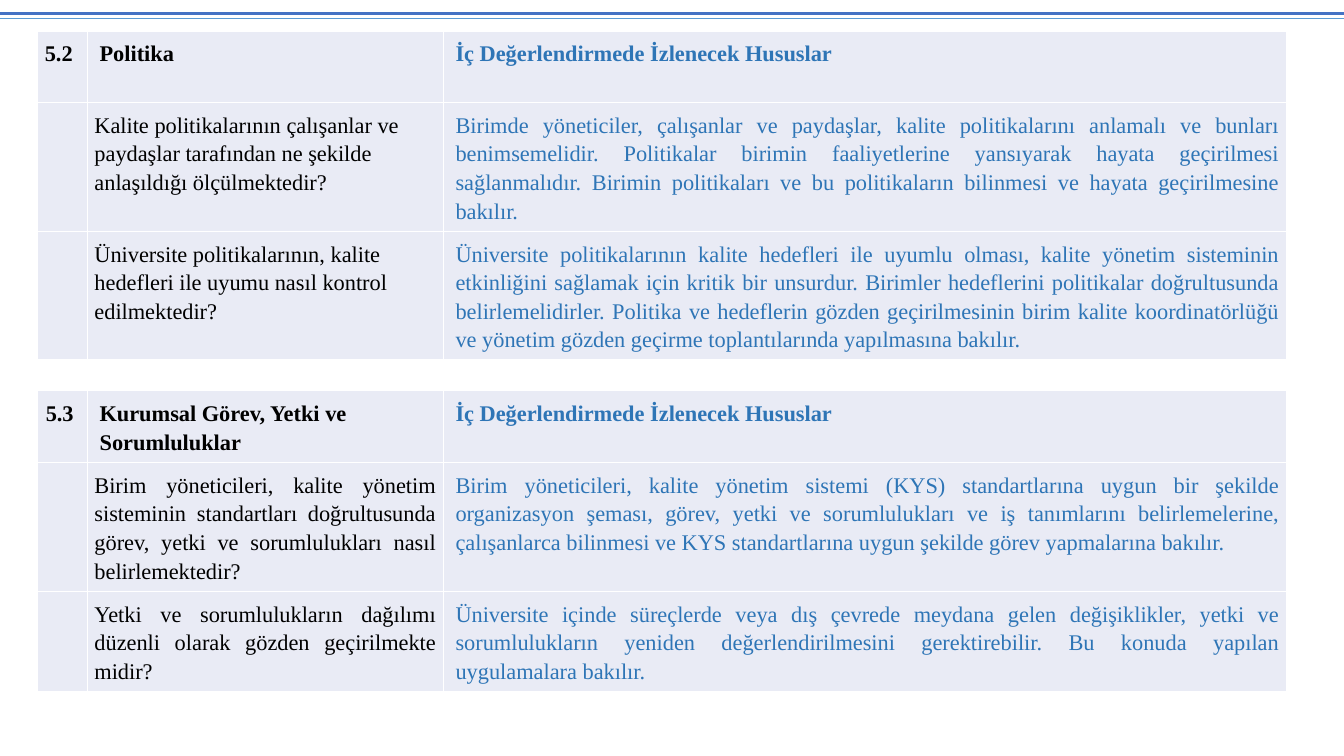
"""Builds a slide with two audit question tables on quality policy and duties."""
import dataclasses
import typing

import pptx
import pptx.dml.color
import pptx.enum.shapes
import pptx.enum.text
import pptx.oxml
import pptx.oxml.ns
import pptx.util

Cm = pptx.util.Cm
Pt = pptx.util.Pt
RGB = pptx.dml.color.RGBColor
Align = pptx.enum.text.PP_ALIGN


@dataclasses.dataclass(frozen=True)
class Theme:
    font: str = "Times New Roman"
    size: float = 16
    spacing: float = 1.15
    question: str = "000000"
    guidance: str = "2E75B6"
    cell: str = "E9EBF5"
    border: str = "FFFFFF"
    thin_rule: str = "5B9BD5"
    thick_rule: str = "4472C4"


@dataclasses.dataclass(frozen=True)
class Rule:
    y: float
    color: str
    width: float


@dataclasses.dataclass(frozen=True)
class Item:
    question: str
    guidance: str
    lines: int


@dataclasses.dataclass(frozen=True)
class Section:
    top: float
    number: str
    title: str
    number_align: typing.Any
    question_align: typing.Any
    items: tuple[Item, ...]


THEME = Theme()
SLIDE_WIDTH, SLIDE_HEIGHT = 33.87, 19.05
TABLE_LEFT = 0.95
COLUMNS = (1.25, 8.97, 21.26)
INSET = 0.18
LINE_HEIGHT = 0.72
INDENT = 0.13
HEADING_LINES = 2
GUIDANCE_TITLE = "İç Değerlendirmede İzlenecek Hususlar"

RULES = (
    Rule(0.46, THEME.thin_rule, 1),
    Rule(0.33, THEME.thick_rule, 2.25),
)

SECTIONS = (
    Section(0.78, "5.2", "Politika", Align.LEFT, Align.LEFT, (
        Item(
            "Kalite politikalarının çalışanlar ve paydaşlar tarafından ne şekilde "
            "anlaşıldığı ölçülmektedir?",
            "Birimde yöneticiler, çalışanlar ve paydaşlar, kalite politikalarını anlamalı "
            "ve bunları benimsemelidir. Politikalar birimin faaliyetlerine yansıyarak "
            "hayata geçirilmesi sağlanmalıdır. Birimin politikaları ve bu politikaların "
            "bilinmesi ve hayata geçirilmesine bakılır.",
            4),
        Item(
            "Üniversite politikalarının, kalite hedefleri ile uyumu nasıl kontrol "
            "edilmektedir?",
            "Üniversite politikalarının kalite hedefleri ile uyumlu olması, kalite yönetim "
            "sisteminin etkinliğini sağlamak için kritik bir unsurdur. Birimler hedeflerini "
            "politikalar doğrultusunda belirlemelidirler. Politika ve hedeflerin gözden "
            "geçirilmesinin birim kalite koordinatörlüğü ve yönetim gözden geçirme "
            "toplantılarında yapılmasına bakılır.",
            4),
    )),
    Section(9.85, "5.3 ", "Kurumsal Görev, Yetki ve Sorumluluklar",
            Align.CENTER, Align.JUSTIFY, (
        Item(
            "Birim yöneticileri, kalite yönetim sisteminin standartları doğrultusunda "
            "görev, yetki ve sorumlulukları nasıl belirlemektedir?",
            "Birim yöneticileri, kalite yönetim sistemi (KYS) standartlarına uygun bir "
            "şekilde organizasyon şeması, görev, yetki ve sorumlulukları ve iş tanımlarını "
            "belirlemelerine, çalışanlarca bilinmesi ve KYS standartlarına uygun şekilde "
            "görev yapmalarına bakılır.",
            4),
        Item(
            "Yetki ve sorumlulukların dağılımı düzenli olarak gözden geçirilmekte midir?",
            "Üniversite içinde süreçlerde veya dış çevrede meydana gelen değişiklikler, "
            "yetki ve sorumlulukların yeniden değerlendirilmesini gerektirebilir. Bu konuda "
            "yapılan uygulamalara bakılır.",
            3),
    )),
)


def write(cell: typing.Any, text: str, *, color: str = THEME.question,
          bold: bool = False, align: typing.Any = Align.LEFT, indent: float = 0) -> None:
    """Put one formatted paragraph into a cell."""
    paragraph = cell.text_frame.paragraphs[0]
    paragraph.alignment = align
    paragraph.line_spacing = THEME.spacing
    paragraph._p.get_or_add_pPr().set("marL", str(Cm(indent)))
    run = paragraph.add_run()
    run.text = text
    run.font.name = THEME.font
    run.font.size = Pt(THEME.size)
    run.font.bold = bold
    run.font.color.rgb = RGB.from_string(color)


def style_cell(cell: typing.Any) -> None:
    """Give a cell its borders, fill and margins."""
    properties = cell._tc.get_or_add_tcPr()
    for side in ("lnL", "lnR", "lnT", "lnB"):
        properties.append(pptx.oxml.parse_xml(
            f'<a:{side} {pptx.oxml.ns.nsdecls("a")} w="{Pt(1)}"><a:solidFill>'
            f'<a:srgbClr val="{THEME.border}"/></a:solidFill></a:{side}>'))
    cell.fill.solid()
    cell.fill.fore_color.rgb = RGB.from_string(THEME.cell)
    cell.margin_left = cell.margin_right = Cm(INSET)
    cell.margin_top = cell.margin_bottom = Cm(INSET)


def draw_rule(slide: typing.Any, rule: Rule) -> None:
    """Draw a full-width line at the top of the slide."""
    line = slide.shapes.add_connector(
        pptx.enum.shapes.MSO_CONNECTOR.STRAIGHT,
        Cm(0), Cm(rule.y), Cm(SLIDE_WIDTH), Cm(rule.y))
    line.line.color.rgb = RGB.from_string(rule.color)
    line.line.width = Pt(rule.width)
    line._element.spPr.append(
        pptx.oxml.parse_xml(f'<a:effectLst {pptx.oxml.ns.nsdecls("a")}/>'))


def draw_section(slide: typing.Any, section: Section) -> None:
    """Draw the table of one section."""
    line_counts = (HEADING_LINES, *(item.lines for item in section.items))
    heights = [count * LINE_HEIGHT + 2 * INSET for count in line_counts]
    table = slide.shapes.add_table(
        len(heights), len(COLUMNS), Cm(TABLE_LEFT), Cm(section.top),
        Cm(sum(COLUMNS)), Cm(sum(heights))).table
    table.first_row = table.horz_banding = False
    for column, width in zip(table.columns, COLUMNS):
        column.width = Cm(width)
    for row, height in zip(table.rows, heights):
        row.height = Cm(height)
    for cell in table.iter_cells():
        style_cell(cell)

    write(table.cell(0, 0), section.number, bold=True, align=section.number_align)
    write(table.cell(0, 1), section.title, bold=True, indent=INDENT)
    write(table.cell(0, 2), GUIDANCE_TITLE, bold=True, color=THEME.guidance,
          align=Align.JUSTIFY, indent=INDENT)
    for index, item in enumerate(section.items, start=1):
        write(table.cell(index, 1), item.question, align=section.question_align)
        write(table.cell(index, 2), item.guidance, color=THEME.guidance,
              align=Align.JUSTIFY, indent=INDENT)


def main() -> None:
    """Build and save the slide."""
    deck = pptx.Presentation()
    deck.slide_width, deck.slide_height = Cm(SLIDE_WIDTH), Cm(SLIDE_HEIGHT)
    slide = deck.slides.add_slide(deck.slide_layouts[6])
    for rule in RULES:
        draw_rule(slide, rule)
    for section in SECTIONS:
        draw_section(slide, section)
    deck.save("out.pptx")


if __name__ == "__main__":
    main()
